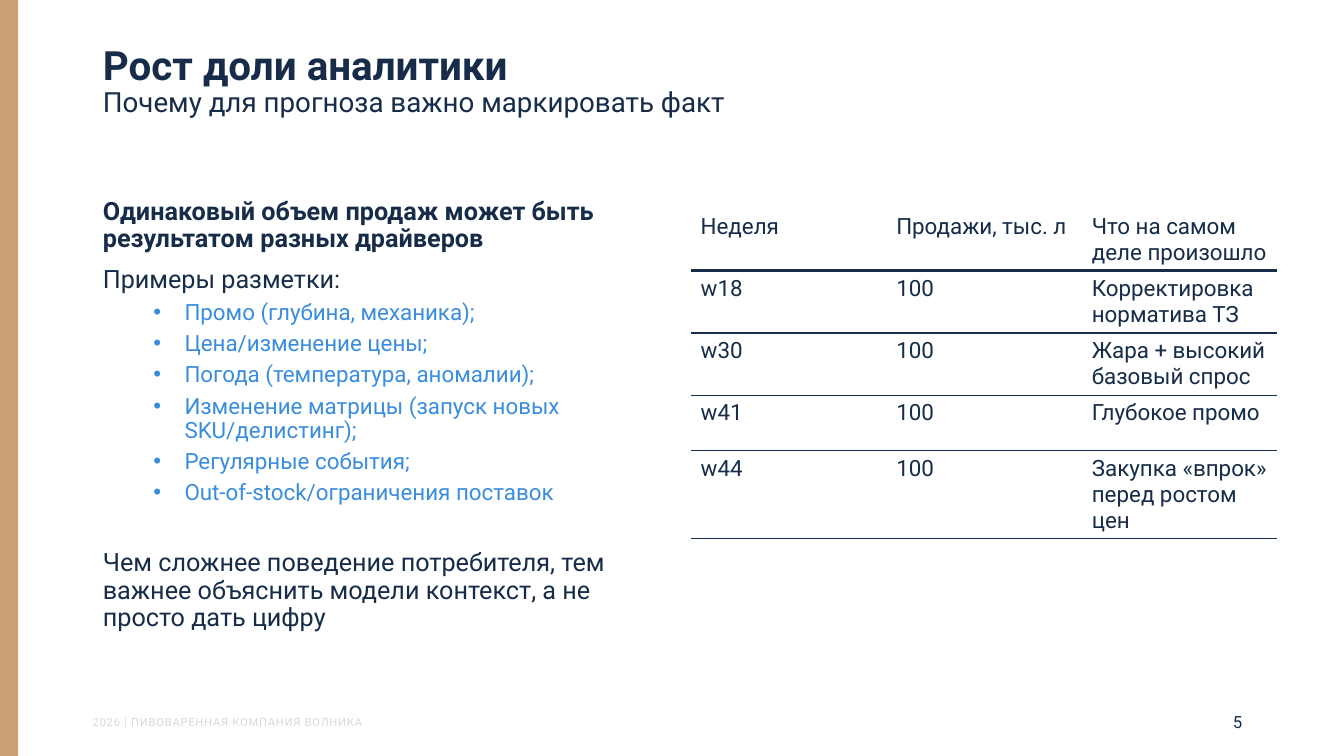
from lxml.etree import SubElement
from pptx import Presentation
from pptx.dml.color import RGBColor
from pptx.enum.shapes import MSO_SHAPE as Shape
from pptx.enum.text import MSO_ANCHOR as Anchor, MSO_AUTO_SIZE as AutoSize, PP_ALIGN as Align
from pptx.oxml import parse_xml
from pptx.oxml.ns import nsdecls, qn
from pptx.util import Inches, Pt

NAVY = RGBColor(0x16, 0x2C, 0x49)
BLUE = RGBColor(0x3A, 0x8D, 0xDE)
SAND = RGBColor(0xCD, 0xA1, 0x76)
PALE = RGBColor(0xD9, 0xD9, 0xD9)
FONT = "Roboto"
PLAIN_TABLE_STYLE = "{2D5ABB26-0587-4C30-8999-92F81FD0307C}"

HEADING = "Рост доли аналитики"
SUBHEADING = "Почему для прогноза важно маркировать факт"
FOOTER = "2026 | ПИВОВАРЕННАЯ КОМПАНИЯ ВОЛНИКА"
PAGE = "5"

LEAD = dict(size=Pt(18), bold=True, color=NAVY)
TEXT = dict(size=Pt(18), bold=False, color=NAVY)
ITEM = dict(size=Pt(16), bold=False, color=BLUE)
CELL = dict(size=Pt(16), bold=False, color=NAVY)

# text, format, level, space before in points
BODY = [
    ("Одинаковый объем продаж может быть результатом разных драйверов", LEAD, 0, 0),
    ("Примеры разметки:", TEXT, 0, 10),
    ("Промо (глубина, механика);", ITEM, 1, 5),
    ("Цена/изменение цены;", ITEM, 1, 5),
    ("Погода (температура, аномалии);", ITEM, 1, 5),
    ("Изменение матрицы (запуск новых SKU/делистинг);", ITEM, 1, 5),
    ("Регулярные события;", ITEM, 1, 5),
    ("Out-of-stock/ограничения поставок", ITEM, 1, 5),
    ("Чем сложнее поведение потребителя, тем важнее объяснить модели контекст, "
     "а не просто дать цифру", TEXT, 0, 32),
]
SALES = [
    ("Неделя", "Продажи, тыс. л", "Что на самом деле произошло"),
    ("w18", "100", "Корректировка норматива ТЗ"),
    ("w30", "100", "Жара + высокий базовый спрос"),
    ("w41", "100", "Глубокое промо"),
    ("w44", "100", "Закупка «впрок» перед ростом цен"),
]

WIDTH, HEIGHT = 13.33, 7.5
MARGIN, COLUMN, CONTENT = 0.92, 5.57, 11.5
FOOT_TOP, FOOT_HEIGHT = 7.1, 0.13
TABLE_LEFT, TABLE_TOP, CELL_WIDTH, CELL_HEIGHT = 6.85, 2.07, 1.94, 0.55


def box(*lengths):
    return [Inches(length) for length in lengths]


def place(shape, *lengths):
    shape.left, shape.top, shape.width, shape.height = box(*lengths)


def add_text(paragraph, text, color, **font_format):
    run = paragraph.add_run()
    run.text = text
    run.font.name = FONT
    run.font.color.rgb = color
    for attribute, value in font_format.items():
        setattr(run.font, attribute, value)
    return run


def set_frame(frame, anchor=Anchor.TOP):
    frame.word_wrap = True
    frame.auto_size = AutoSize.NONE
    frame.vertical_anchor = anchor


def set_bullet(paragraph, level):
    properties = paragraph._p.get_or_add_pPr()
    left, indent = box(0.81, -0.31) if level else (0, 0)
    properties.set("marL", str(left))
    properties.set("indent", str(indent))
    if level:
        SubElement(properties, qn("a:buFont"), typeface="Arial")
        SubElement(properties, qn("a:buChar"), char="•")
    else:
        SubElement(properties, qn("a:buNone"))


def set_border(cell, side, points):
    cell._tc.get_or_add_tcPr().append(parse_xml(
        f'<a:{side} {nsdecls("a")} w="{Pt(points)}"><a:solidFill>'
        f'<a:srgbClr val="{NAVY}"/></a:solidFill></a:{side}>'))


def add_headings(title):
    place(title, MARGIN, 0.4, CONTENT, 1.12)
    set_frame(title.text_frame)
    line = title.text_frame.paragraphs[0]
    line.alignment = Align.LEFT
    line.line_spacing = 0.9
    add_text(line, HEADING, NAVY, size=Pt(28.8), bold=True)
    line.add_line_break()
    add_text(line, SUBHEADING, NAVY, size=Pt(19.8), bold=False)


def add_body(body):
    place(body, MARGIN, 1.92, COLUMN, 4.82)
    frame = body.text_frame
    set_frame(frame)
    for number, (text, text_format, level, before) in enumerate(BODY):
        paragraph = frame.add_paragraph() if number else frame.paragraphs[0]
        paragraph.level = level
        paragraph.line_spacing = 0.9
        paragraph.space_before = Pt(before)
        set_bullet(paragraph, level)
        add_text(paragraph, text, **text_format)


def add_sales(shapes):
    rows, columns = len(SALES), len(SALES[0])
    table = shapes.add_table(rows, columns, *box(
        TABLE_LEFT, TABLE_TOP, columns * CELL_WIDTH, rows * CELL_HEIGHT)).table
    table.first_row = table.horz_banding = False
    table._tbl.tblPr.find(qn("a:tableStyleId")).text = PLAIN_TABLE_STYLE
    for row, texts in enumerate(SALES):
        for column, text in enumerate(texts):
            cell = table.cell(row, column)
            add_text(cell.text_frame.paragraphs[0], text, **CELL)
            if row:
                set_border(cell, "lnT", 2.25 if row == 1 else 1)
            set_border(cell, "lnB", 1 if row else 2.25)
            cell.fill.background()


def add_footer(shapes):
    footer = shapes.add_textbox(*box(MARGIN, FOOT_TOP, COLUMN, FOOT_HEIGHT)).text_frame
    set_frame(footer)
    for side in ("left", "top", "right", "bottom"):
        setattr(footer, f"margin_{side}", 0)
    run = add_text(footer.paragraphs[0], FOOTER, PALE, size=Pt(8))
    run._r.get_or_add_rPr().set("spc", "50")

    page = shapes.add_textbox(*box(11.44, FOOT_TOP, 0.98, FOOT_HEIGHT)).text_frame
    set_frame(page, Anchor.MIDDLE)
    page.paragraphs[0].alignment = Align.RIGHT
    add_text(page.paragraphs[0], PAGE, NAVY, size=Pt(12))


def main():
    deck = Presentation()
    deck.slide_width, deck.slide_height = box(WIDTH, HEIGHT)
    slide = deck.slides.add_slide(deck.slide_layouts[1])
    stripe = slide.shapes.add_shape(Shape.RECTANGLE, *box(0, 0, 0.18, HEIGHT))
    stripe.shadow.inherit = False
    stripe.fill.solid()
    stripe.fill.fore_color.rgb = SAND
    stripe.line.fill.background()
    add_headings(slide.shapes.title)
    add_body(slide.placeholders[1])
    add_sales(slide.shapes)
    add_footer(slide.shapes)
    deck.save("out.pptx")


if __name__ == "__main__":
    main()
